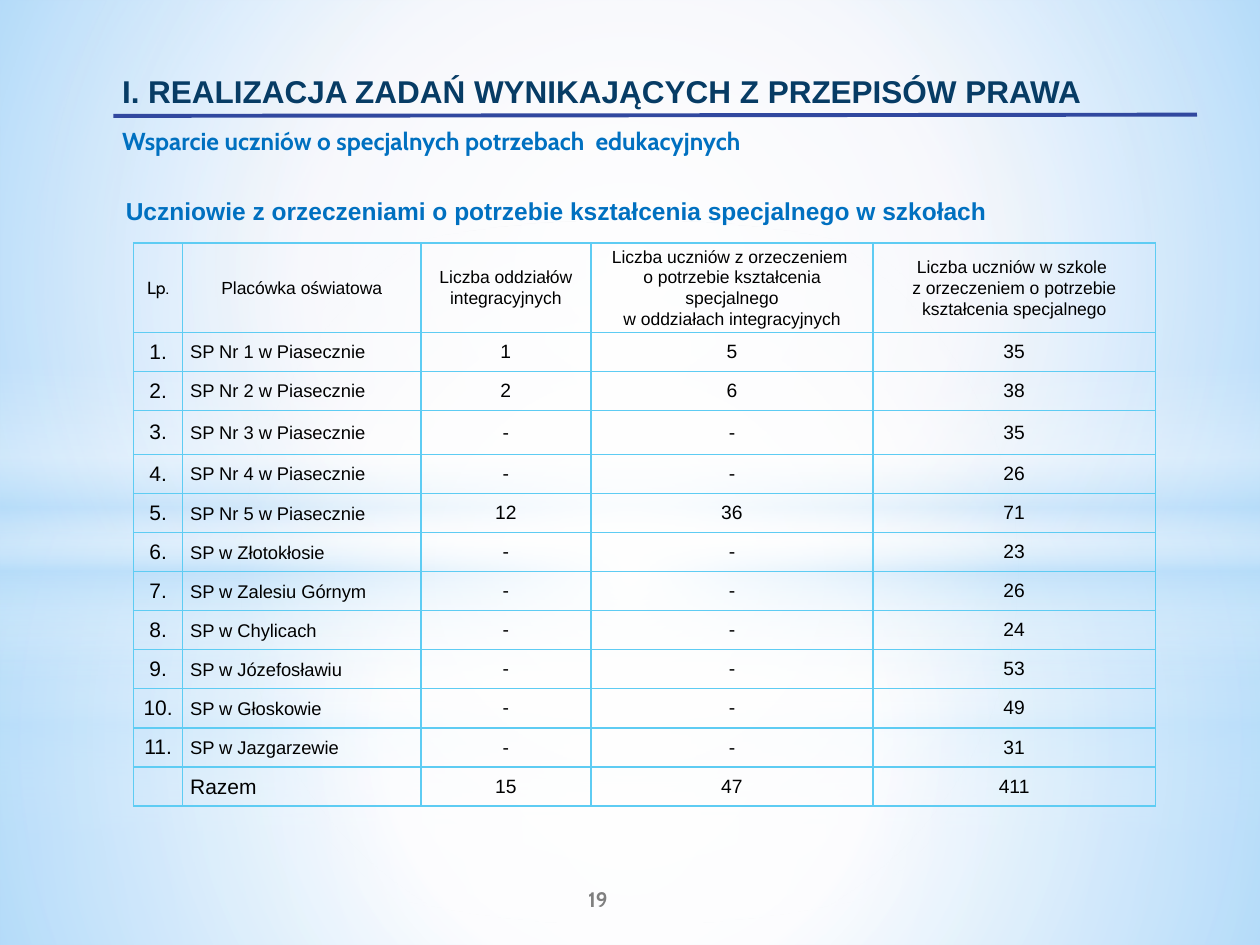
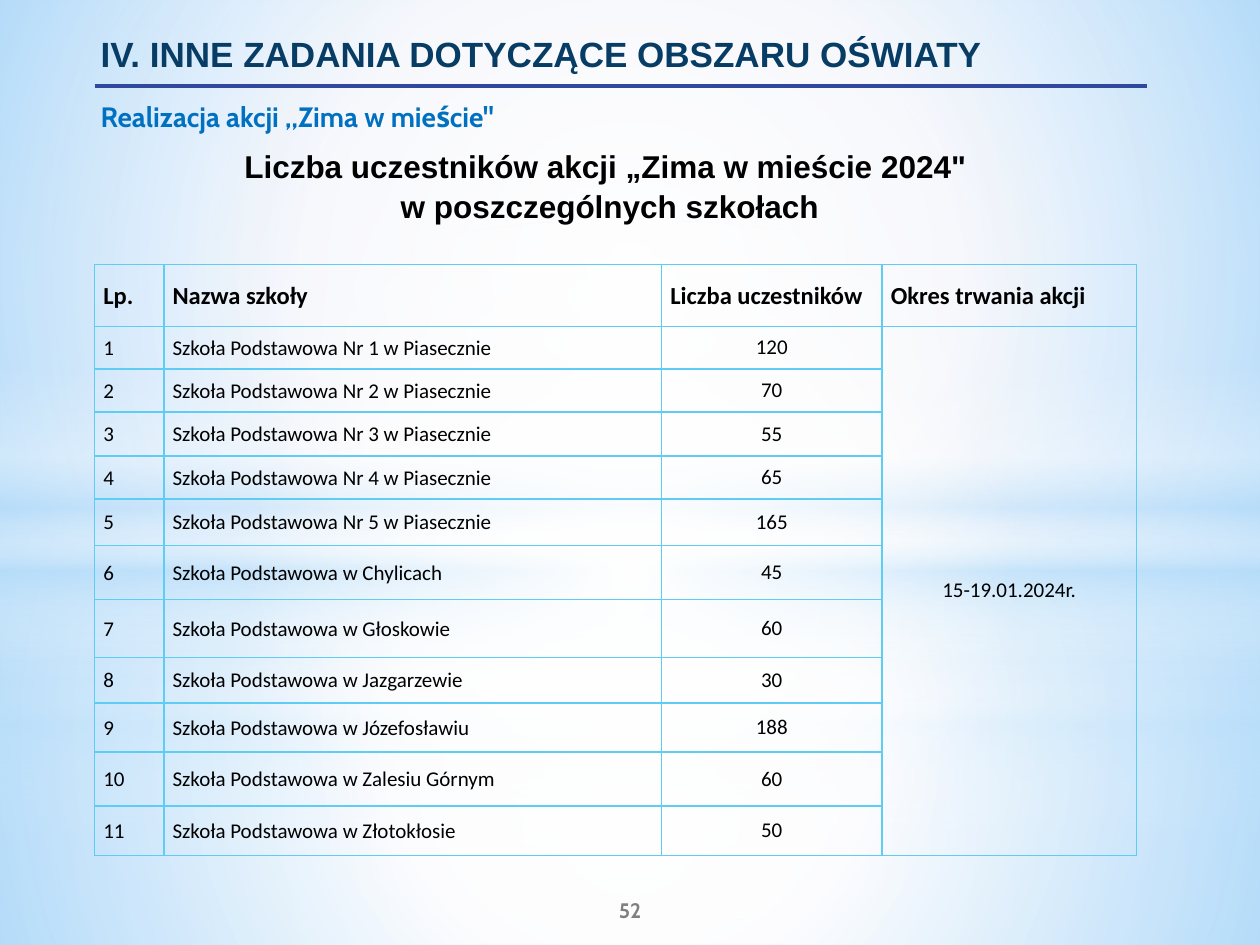
from dataclasses import dataclass, replace

from lxml import etree
from pptx import Presentation
from pptx.dml.color import RGBColor
from pptx.enum.shapes import MSO_CONNECTOR, MSO_SHAPE
from pptx.enum.text import MSO_ANCHOR, PP_ALIGN
from pptx.oxml import parse_xml
from pptx.oxml.ns import nsdecls, qn
from pptx.util import Inches, Pt

# Shared colours
NAVY = RGBColor(0x07, 0x3C, 0x65)
BLUE = RGBColor(0x00, 0x70, 0xC0)
RULE_BLUE = RGBColor(0x31, 0x48, 0x9F)
BORDER_BLUE = RGBColor(0x5E, 0xCC, 0xF3)
PALE_BLUE = RGBColor(0xB4, 0xDC, 0xFA)
LAVENDER = RGBColor(0xCA, 0xD1, 0xEE)
WHITE = RGBColor(0xFF, 0xFF, 0xFF)
BLACK = RGBColor(0, 0, 0)
GREY = RGBColor(0x7F, 0x7F, 0x7F)

# Backdrop gradients: position, colour, opacity (all in percent)
LOWER_GLOW = [(0, WHITE, 91), (37, WHITE, 76), (100, PALE_BLUE, 79)]
UPPER_GLOW = [(0, WHITE, 89), (48, WHITE, 62), (100, PALE_BLUE, 79)]
HORIZON = [(0, WHITE, 0), (29, WHITE, 30), (45, PALE_BLUE, 40),
           (55, WHITE, 26), (65, PALE_BLUE, 60), (100, WHITE, 0)]
# Height of the split between the glows, top of the horizon band, halo extent
BACKDROP_LAYERS = [(5.58, 4.12, 56), (4.23, 2.9, 54)]


@dataclass(frozen=True)
class TextStyle:
    size: float
    font: str = "Arial"
    color: RGBColor = BLACK
    bold: bool = False
    align: PP_ALIGN = PP_ALIGN.LEFT
    spacing: float = 1.0
    indent: float = 0
    space_before: float = 0


TITLE = TextStyle(18, color=NAVY, bold=True)
SUBTITLE = TextStyle(14, "Cabin", BLUE, True)
PAGE_NUMBER = TextStyle(12, "Cabin", GREY, True)

# Slide 1: pupils with special-education certificates
SUPPORT_HEADER = [
    "Lp.",
    "Placówka oświatowa",
    "Liczba oddziałów integracyjnych",
    "Liczba uczniów z orzeczeniem \vo potrzebie kształcenia specjalnego\n"
    "w oddziałach integracyjnych",
    "Liczba uczniów w szkole \vz orzeczeniem o potrzebie kształcenia specjalnego",
]
SUPPORT_SCHOOLS = [
    ("SP Nr 1 w Piasecznie", "1", "5", "35"),
    ("SP Nr 2 w Piasecznie", "2", "6", "38"),
    ("SP Nr 3 w Piasecznie", "-", "-", "35"),
    ("SP Nr 4 w Piasecznie", "-", "-", "26"),
    ("SP Nr 5 w Piasecznie", "12", "36", "71"),
    ("SP w Złotokłosie", "-", "-", "23"),
    ("SP w Zalesiu Górnym", "-", "-", "26"),
    ("SP w Chylicach", "-", "-", "24"),
    ("SP w Józefosławiu", "-", "-", "53"),
    ("SP w Głoskowie", "-", "-", "49"),
    ("SP w Jazgarzewie", "-", "-", "31"),
]
SUPPORT_TOTAL = ["", "Razem", "15", "47", "411"]

# Slide 2: participants of the winter programme
WINTER_HEADER = ["Lp.", "Nazwa szkoły", "Liczba uczestników", "Okres trwania akcji"]
WINTER_PERIOD = "15-19.01.2024r."
WINTER_SCHOOLS = [
    ("Nr 1 w Piasecznie", 120), ("Nr 2 w Piasecznie", 70),
    ("Nr 3 w Piasecznie", 55), ("Nr 4 w Piasecznie", 65),
    ("Nr 5 w Piasecznie", 165), ("w Chylicach", 45),
    ("w Głoskowie", 60), ("w Jazgarzewie", 30),
    ("w Józefosławiu", 188), ("w Zalesiu Górnym", 60),
    ("w Złotokłosie", 50),
]


def add_gradient_shape(slide, preset, top, height, stops, radial):
    """Full-width borderless shape with a partly transparent gradient."""
    shape = slide.shapes.add_shape(preset, 0, Inches(top), Inches(10), Inches(height))
    shape.shadow.inherit = False
    shape.line.fill.background()
    shape.fill.background()
    stop_xml = "".join(
        f'<a:gs pos="{position * 1000}"><a:srgbClr val="{color}">'
        f'<a:alpha val="{opacity * 1000}"/></a:srgbClr></a:gs>'
        for position, color, opacity in stops)
    direction = '<a:lin ang="5400000" scaled="0"/>'
    if radial:
        direction = ('<a:path path="circle"><a:fillToRect l="50000" t="50000" '
                     'r="50000" b="50000"/></a:path>')
    gradient = parse_xml(f'<a:gradFill {nsdecls("a")} rotWithShape="1">'
                         f'<a:gsLst>{stop_xml}</a:gsLst>{direction}</a:gradFill>')
    properties = shape._element.spPr
    properties.replace(properties.find(qn("a:noFill")), gradient)


def add_backdrop(slide):
    for split, horizon_top, halo_extent in BACKDROP_LAYERS:
        halo = [(0, WHITE, 100), (halo_extent, WHITE, 0), (100, WHITE, 0)]
        add_gradient_shape(slide, MSO_SHAPE.RECTANGLE, split, 7.5 - split, LOWER_GLOW, True)
        add_gradient_shape(slide, MSO_SHAPE.RECTANGLE, 0, split, UPPER_GLOW, True)
        add_gradient_shape(slide, MSO_SHAPE.RECTANGLE, horizon_top, 2.5, HORIZON, False)
        add_gradient_shape(slide, MSO_SHAPE.OVAL, 1.75, 5.58, halo, True)


def write_paragraph(paragraph, text, style):
    paragraph.alignment = style.align
    paragraph.line_spacing = style.spacing
    paragraph.space_before = Pt(style.space_before)
    if style.indent:
        paragraph._p.get_or_add_pPr().set("marL", str(Inches(style.indent)))
    for index, line in enumerate(text.split("\v")):
        if index:
            paragraph.add_line_break()
        run = paragraph.add_run()
        run.text = line
        run.font.size = Pt(style.size)
        run.font.name = style.font
        run.font.bold = style.bold
        run.font.color.rgb = style.color


def write_paragraphs(text_frame, items):
    for index, (text, style) in enumerate(items):
        paragraph = text_frame.add_paragraph() if index else text_frame.paragraphs[0]
        write_paragraph(paragraph, text, style)


def add_text(slide, left, top, width, height, items, anchor=MSO_ANCHOR.TOP):
    text_box = slide.shapes.add_textbox(
        Inches(left), Inches(top), Inches(width), Inches(height))
    text_box.text_frame.word_wrap = True
    text_box.text_frame.vertical_anchor = anchor
    write_paragraphs(text_box.text_frame, items)


def add_rule(slide, start, end):
    """Line under the slide title."""
    rule = slide.shapes.add_connector(
        MSO_CONNECTOR.STRAIGHT, *(Inches(value) for value in (*start, *end)))
    rule.line.color.rgb = RULE_BLUE
    rule.line.width = Pt(2.25)
    etree.SubElement(rule._element.spPr, qn("a:effectLst"))


def format_cell(cell, side_margin):
    cell.vertical_anchor = MSO_ANCHOR.MIDDLE
    cell.margin_left = cell.margin_right = Inches(side_margin)
    cell.margin_top = cell.margin_bottom = 0
    properties = cell._tc.get_or_add_tcPr()
    for side in "LRTB":
        properties.append(parse_xml(
            f'<a:ln{side} {nsdecls("a")} w="{Pt(1)}"><a:solidFill>'
            f'<a:srgbClr val="{BORDER_BLUE}"/></a:solidFill></a:ln{side}>'))
    cell.fill.background()


def add_grid(slide, left, top, widths, heights, rows, style_for, side_margin):
    """Table with outlined, unfilled cells; style_for(row, column) gives the text style."""
    frame = slide.shapes.add_table(
        len(heights), len(widths), Inches(left), Inches(top),
        Inches(sum(widths)), Inches(sum(heights)))
    table = frame.table
    table.first_row = table.horz_banding = False
    for column, width in zip(table.columns, widths):
        column.width = Inches(width)
    for row, height in zip(table.rows, heights):
        row.height = Inches(height)
    for row_index, texts in enumerate(rows):
        for column_index, text in enumerate(texts):
            cell = table.cell(row_index, column_index)
            format_cell(cell, side_margin)
            style = style_for(row_index, column_index)
            if text:
                write_paragraphs(cell.text_frame,
                                 [(part, style) for part in text.split("\n")])
            else:
                end = cell.text_frame.paragraphs[0]._p.get_or_add_endParaRPr()
                end.set("sz", str(int(style.size * 100)))
    return table


def support_style(row, column):
    centred = TextStyle(11, align=PP_ALIGN.CENTER)
    if row == 0:
        font = "Cabin" if column == 0 else "Arial"
        return replace(centred, size=10, font=font, spacing=1.06)
    if column == 0:
        return replace(centred, size=12)
    if column == 1:
        is_total = row == len(SUPPORT_SCHOOLS) + 1
        return TextStyle(12 if is_total else 10.5, spacing=1.06)
    return centred


def winter_style(row, column):
    if row == 0:
        return TextStyle(14, "Calibri", bold=True, spacing=1.04)
    if column < 2:
        return TextStyle(12, "Calibri", spacing=1.04)
    return TextStyle(12, "Calibri", align=PP_ALIGN.CENTER)


def build_support_slide(slide):
    add_backdrop(slide)
    add_text(slide, 0.72, 0.52, 8.78, 0.78, [
        ("I. REALIZACJA ZADAŃ WYNIKAJĄCYCH Z PRZEPISÓW PRAWA",
         replace(TITLE, indent=0.15)),
        ("Wsparcie uczniów o specjalnych potrzebach  edukacyjnych",
         replace(SUBTITLE, indent=0.15, space_before=9.5)),
    ])
    add_rule(slide, (0.9, 0.92), (9.5, 0.91))
    add_text(slide, 0.9, 1.51, 8.11, 0.34, [
        ("Uczniowie z orzeczeniami o potrzebie kształcenia specjalnego w szkołach",
         replace(SUBTITLE, font="Arial")),
    ])
    schools = [[f"{number}.", *school]
               for number, school in enumerate(SUPPORT_SCHOOLS, 1)]
    heights = [0.7] + [0.31] * 12
    heights[3] = 0.35
    add_grid(slide, 1.06, 1.93, [0.39, 1.89, 1.35, 2.24, 2.24], heights,
             [SUPPORT_HEADER, *schools, SUPPORT_TOTAL], support_style, 0.06)
    add_text(slide, 4.57, 6.99, 0.63, 0.3, [("19", PAGE_NUMBER)])


def build_winter_slide(slide):
    add_backdrop(slide)
    add_text(slide, 4, 7.02, 2, 0.4,
             [("52", replace(PAGE_NUMBER, align=PP_ALIGN.CENTER))], MSO_ANCHOR.MIDDLE)
    add_text(slide, 0.5, 0.21, 9, 0.87, [
        ("IV. INNE ZADANIA DOTYCZĄCE OBSZARU OŚWIATY",
         replace(TITLE, size=20, indent=0.2)),
    ])
    add_rule(slide, (0.75, 0.68), (9.1, 0.68))
    add_text(slide, 0.7, 0.74, 8.61, 0.37,
             [('Realizacja akcji „Zima w mieście"', replace(SUBTITLE, size=16))])
    heading = TextStyle(18, bold=True, align=PP_ALIGN.CENTER, spacing=1.04)
    add_text(slide, 0.68, 1.11, 8.32, 0.73, [
        ('Liczba uczestników akcji „Zima w mieście 2024" ', heading),
        ("w poszczególnych szkołach", heading),
    ])
    schools = [[str(number), f"Szkoła Podstawowa {name}", str(participants),
                WINTER_PERIOD if number == 1 else ""]
               for number, (name, participants) in enumerate(WINTER_SCHOOLS, 1)]
    heights = [0.49, 0.34, 0.34, 0.35, 0.34, 0.37, 0.43, 0.46, 0.36, 0.39, 0.43, 0.39]
    table = add_grid(slide, 0.75, 2.1, [0.55, 3.95, 1.75, 2.02], heights,
                     [WINTER_HEADER, *schools], winter_style, 0.07)
    table.cell(1, 3).merge(table.cell(len(schools), 3))


def main():
    presentation = Presentation()
    presentation.slide_width = Inches(10)
    presentation.slide_height = Inches(7.5)
    background = presentation.slide_master.background.fill
    background.solid()
    background.fore_color.rgb = LAVENDER
    blank_layout = presentation.slide_layouts[6]
    for build_slide in (build_support_slide, build_winter_slide):
        build_slide(presentation.slides.add_slide(blank_layout))
    presentation.save("out.pptx")


if __name__ == "__main__":
    main()
